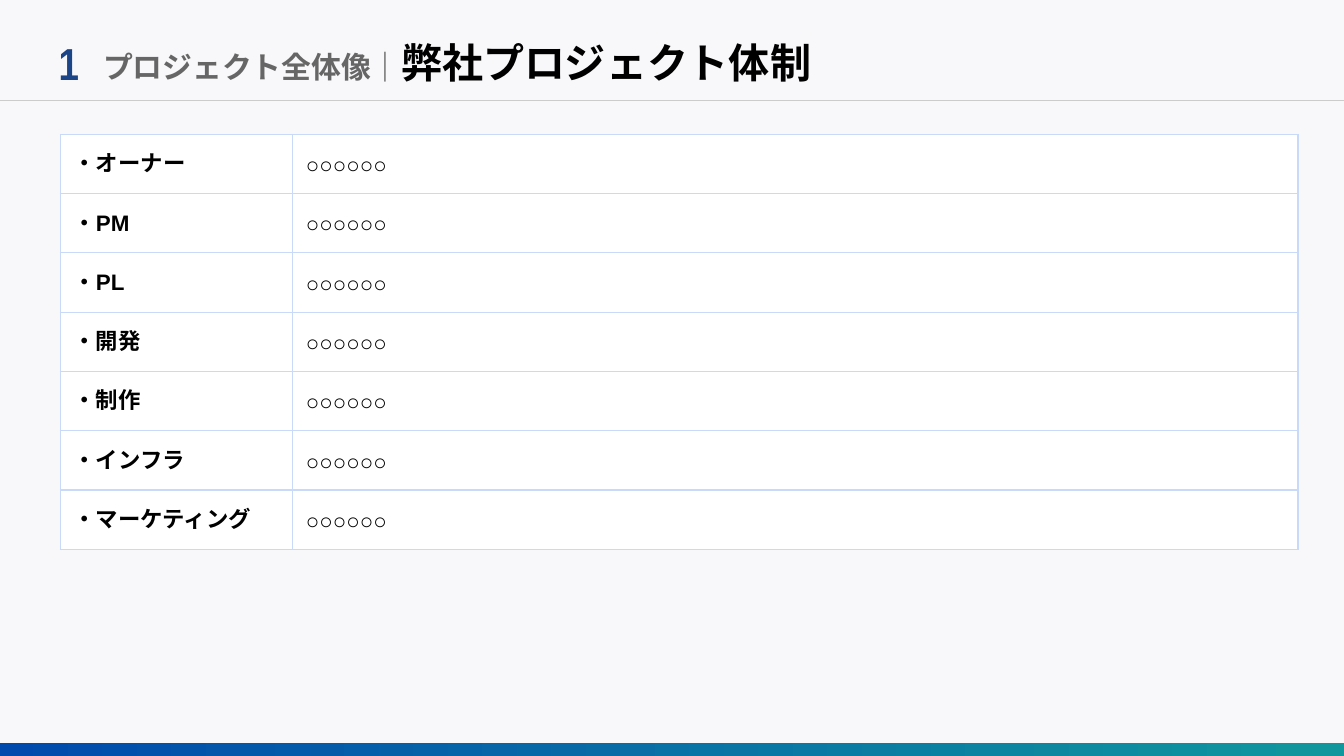
from lxml.etree import SubElement
from pptx import Presentation
from pptx.dml.color import RGBColor
from pptx.enum.lang import MSO_LANGUAGE_ID as Language
from pptx.enum.shapes import MSO_CONNECTOR as Connector, MSO_SHAPE as Shape
from pptx.enum.text import MSO_ANCHOR as Anchor, MSO_AUTO_SIZE as AutoSize, PP_ALIGN as Align
from pptx.oxml import parse_xml
from pptx.oxml.ns import nsdecls, qn
from pptx.util import Cm, Pt

BACKGROUND = RGBColor(0xF8, 0xF8, 0xFA)
WHITE = RGBColor(0xFF, 0xFF, 0xFF)
BLACK = RGBColor(0x00, 0x00, 0x00)
GRAY = RGBColor(0x66, 0x66, 0x66)
RULE_GRAY = RGBColor(0xCC, 0xCC, 0xCC)
NAVY = RGBColor(0x1C, 0x45, 0x87)
BLUE = RGBColor(0x00, 0x4A, 0xAD)
TEAL = RGBColor(0x10, 0x97, 0x9D)
BORDER = RGBColor(0xC9, 0xDA, 0xF8)

MARGIN = Cm(0.25)
ROLES = ["オーナー", "PM", "PL", "開発", "制作", "インフラ", "マーケティング"]
MEMBER = "○○○○○○"


class SlideBuilder:
    def __init__(self, slide, font="Arial"):
        self.slide = slide
        self.font = font
        fill = slide.background.fill
        fill.solid()
        fill.fore_color.rgb = BACKGROUND

    def format_run(self, run, size, color, bold=True, font=None):
        name = font or self.font
        run.font.name = name
        run.font.size = Pt(size)
        run.font.bold = bold
        run.font.color.rgb = color
        run.font.language_id = Language.JAPANESE
        east_asian = SubElement(run.font._element, qn("a:ea"))
        east_asian.set("typeface", name)

    def rule(self, left, right, top):
        line = self.slide.shapes.add_connector(Connector.STRAIGHT, left, top, right, top)
        line.line.color.rgb = RULE_GRAY
        line.line.width = Pt(0.75)
        SubElement(line._element.spPr, qn("a:effectLst"))

    def gradient_bar(self, left, top, width, height, colors):
        bar = self.slide.shapes.add_shape(Shape.RECTANGLE, left, top, width, height)
        bar.shadow.inherit = False
        bar.line.fill.background()
        bar.fill.gradient()
        bar.fill.gradient_angle = 0
        for stop, color in zip(bar.fill.gradient_stops, colors):
            stop.color.rgb = color

    def heading(self, shape, left, top, width, height, runs):
        """Place a heading shape; each run is (text, format options)."""
        shape.left, shape.top, shape.width, shape.height = left, top, width, height
        frame = shape.text_frame
        frame.word_wrap = True
        frame.auto_size = AutoSize.NONE
        frame.vertical_anchor = Anchor.MIDDLE
        frame.margin_left = frame.margin_right = MARGIN
        frame.margin_top = frame.margin_bottom = MARGIN
        paragraph = frame.paragraphs[0]
        paragraph.alignment = Align.LEFT
        for text, style in runs:
            run = paragraph.add_run()
            run.text = text
            self.format_run(run, **style)

    def cell(self, cell, text, bold):
        cell.margin_left = cell.margin_right = MARGIN
        cell.margin_top = cell.margin_bottom = MARGIN
        cell.vertical_anchor = Anchor.MIDDLE
        cell.fill.solid()
        cell.fill.fore_color.rgb = WHITE
        cell.text_frame.text = text
        self.format_run(cell.text_frame.paragraphs[0].runs[0], 12, BLACK, bold)
        properties = cell._tc.get_or_add_tcPr()
        for position, side in enumerate(("lnL", "lnR", "lnT", "lnB")):
            properties.insert(position, parse_xml(
                f'<a:{side} {nsdecls("a")} w="{Pt(0.75)}"><a:solidFill>'
                f'<a:srgbClr val="{BORDER}"/></a:solidFill></a:{side}>'))

    def role_table(self, left, top, column_widths, row_height, rows):
        frame = self.slide.shapes.add_table(
            len(rows), len(column_widths), left, top,
            sum(column_widths), row_height * len(rows))
        table = frame.table
        for column, width in zip(table.columns, column_widths):
            column.width = width
        for row, (role, member) in zip(table.rows, rows):
            row.height = row_height
            self.cell(row.cells[0], f"・{role}", bold=True)
            self.cell(row.cells[1], member, bold=False)
            paragraph = row.cells[1].text_frame.paragraphs[0]
            paragraph.line_spacing = 1.15
            paragraph.space_after = Pt(5)


def main():
    presentation = Presentation()
    presentation.slide_width = Cm(25.4)
    presentation.slide_height = Cm(14.29)
    title_only = presentation.slide_layouts[5]
    slide = presentation.slides.add_slide(title_only)
    builder = SlideBuilder(slide)

    builder.rule(Cm(-0.02), Cm(25.42), Cm(1.9))
    builder.gradient_bar(Cm(-0.02), Cm(14.05), Cm(25.44), Cm(0.25), (BLUE, TEAL))

    top, height = Cm(0.38), Cm(1.6)
    number = slide.shapes.add_textbox(0, 0, 0, 0)
    builder.heading(number, Cm(0.86), top, Cm(1.85), height, [
        ("1", dict(size=24, color=NAVY, font="Arial Narrow"))])
    builder.heading(slide.shapes.title, Cm(1.7), top, Cm(15.65), height, [
        ("プロジェクト全体像｜", dict(size=16, color=GRAY)),
        ("弊社プロジェクト体制", dict(size=22, color=BLACK))])

    builder.role_table(Cm(1.14), Cm(2.54), (Cm(4.39), Cm(19)), Cm(1.12),
                       [(role, MEMBER) for role in ROLES])
    presentation.save("out.pptx")


if __name__ == "__main__":
    main()
